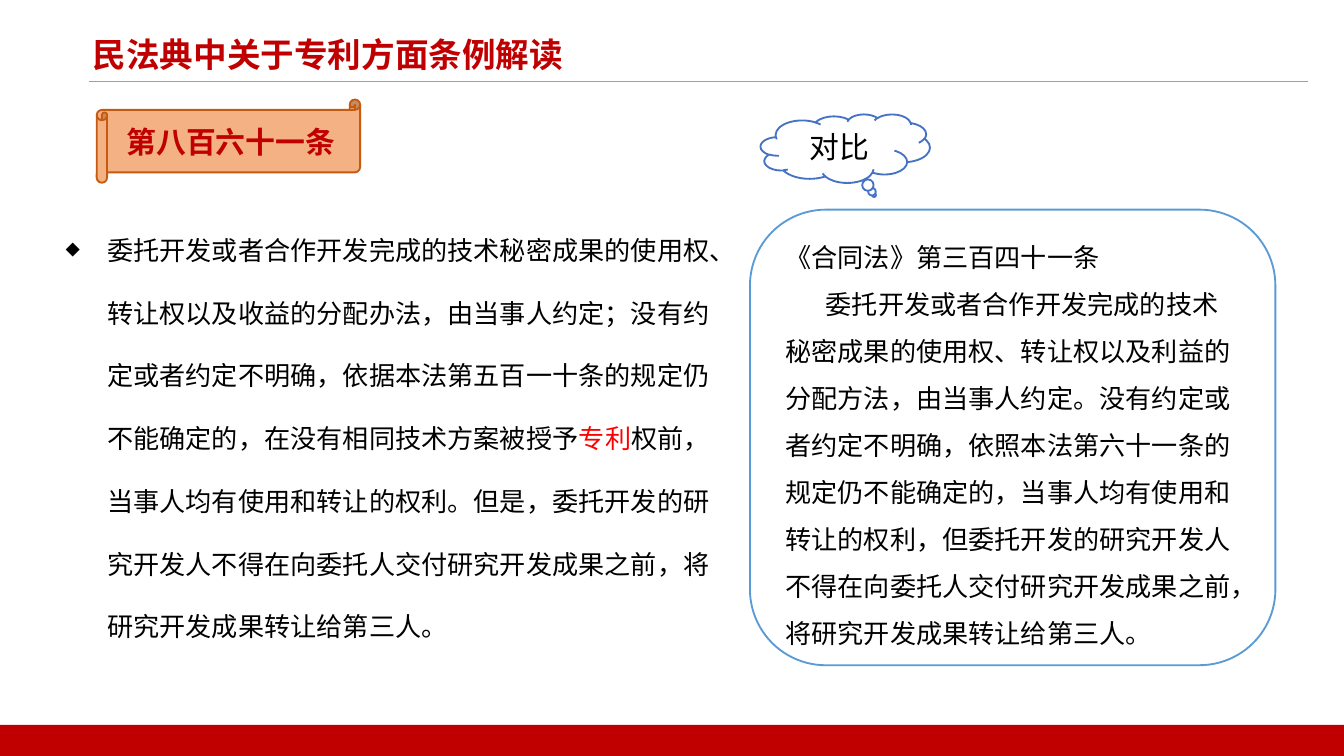
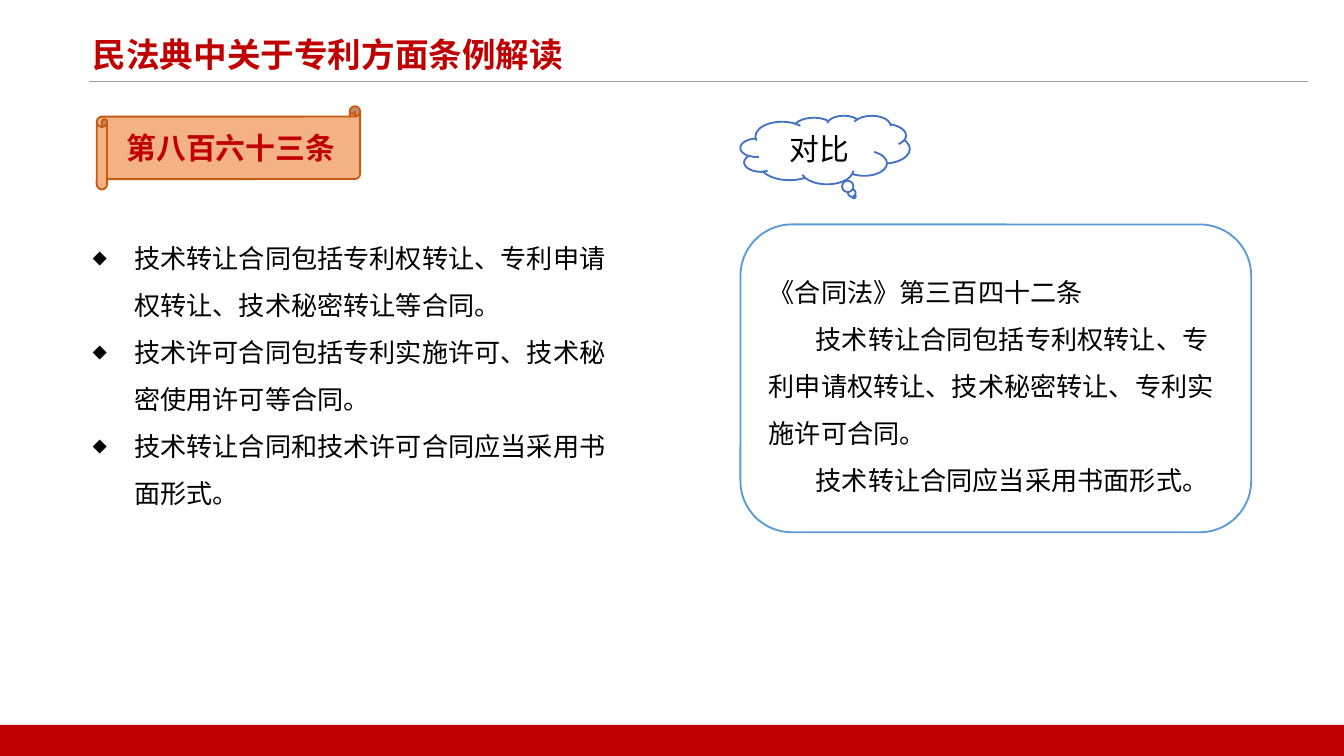
from dataclasses import dataclass

from lxml.etree import SubElement
from pptx import Presentation
from pptx.dml.color import RGBColor
from pptx.enum.shapes import MSO_CONNECTOR, MSO_SHAPE as SHAPE
from pptx.enum.text import MSO_ANCHOR as ANCHOR, MSO_AUTO_SIZE as AUTO, PP_ALIGN as ALIGN
from pptx.oxml.ns import qn
from pptx.util import Inches, Pt


@dataclass(frozen=True)
class Theme:
    """Colours, font and type sizes shared by the slides."""
    font: str = "Noto Sans CJK SC"
    red: str = "C00000"
    highlight: str = "FF0000"
    ink: str = "000000"
    paper: str = "FFFFFF"
    rule: str = "A0A0A0"
    scroll: str = "F4B183"
    scroll_edge: str = "C55A11"
    cloud_edge: str = "4472C4"
    panel_edge: str = "5B9BD5"
    title_size: int = 18
    label_size: int = 16
    body_size: int = 14


THEME = Theme()
WIDTH = 10
HEIGHT = WIDTH * 9 / 16
TITLE = "民法典中关于专利方面条例解读"


def rgb(code):
    """Turn a hex code into a colour."""
    return RGBColor.from_string(code)


def inches(box):
    """Turn a box of numbers into lengths."""
    return [Inches(value) for value in box]


def style(paragraph, size, color=THEME.ink, bold=False, spacing=1.0, align=ALIGN.LEFT):
    """Format a whole paragraph, for Latin and East Asian text alike."""
    paragraph.alignment = align
    paragraph.line_spacing = spacing
    font = paragraph.font
    font.size, font.bold, font.name = Pt(size), bold, THEME.font
    font.color.rgb = rgb(color)
    defaults = paragraph._p.pPr.find(qn("a:defRPr"))
    SubElement(defaults, qn("a:ea"), typeface=THEME.font)


def add_bullet(paragraph):
    """Give a paragraph a diamond and a hanging indent."""
    properties = paragraph._p.get_or_add_pPr()
    properties.set("marL", str(Inches(0.31)))
    properties.set("indent", str(Inches(-0.31)))
    SubElement(properties, qn("a:buSzPct"), val="55000")
    SubElement(properties, qn("a:buFont"), typeface=THEME.font)
    SubElement(properties, qn("a:buChar"), char="◆")


def add_outline(slide, kind, box, edge=None, fill=None):
    """Draw a preset shape without shadow."""
    shape = slide.shapes.add_shape(kind, *inches(box))
    shape.shadow.inherit = False
    if fill:
        shape.fill.solid()
        shape.fill.fore_color.rgb = rgb(fill)
    else:
        shape.fill.background()
    if edge:
        shape.line.color.rgb = rgb(edge)
        shape.line.width = Pt(1)
    else:
        shape.line.fill.background()
    return shape


def add_label(shape, text, color, bold):
    """Centre a short label in a shape."""
    frame = shape.text_frame
    frame.vertical_anchor = ANCHOR.MIDDLE
    frame.text = text
    style(frame.paragraphs[0], THEME.label_size, color, bold, align=ALIGN.CENTER)


def add_frame(slide):
    """Place the title, its rule and the bottom band."""
    title = slide.shapes.title
    title.left, title.top, title.width, title.height = inches((0.59, 0.2, 9.09, 0.35))
    frame = title.text_frame
    frame.text = TITLE
    frame.vertical_anchor = ANCHOR.TOP
    frame.margin_top = Inches(0.05)
    frame.auto_size = AUTO.NONE
    style(frame.paragraphs[0], THEME.title_size, THEME.red, True)

    rule = slide.shapes.add_connector(MSO_CONNECTOR.STRAIGHT, *inches((0.66, 0.61, 9.73, 0.61)))
    rule.line.color.rgb = rgb(THEME.rule)
    rule.line.width = Pt(0.5)
    SubElement(rule._element.spPr, qn("a:effectLst"))

    band_height = 0.23
    add_outline(slide, SHAPE.RECTANGLE, (0, HEIGHT - band_height, WIDTH, band_height), fill=THEME.red)


def add_article_scroll(slide, left, top, article):
    """Name the article on a scroll."""
    scroll = add_outline(slide, SHAPE.HORIZONTAL_SCROLL, (left, top, 1.96, 0.62),
                         THEME.scroll_edge, THEME.scroll)
    add_label(scroll, article, THEME.red, True)


def add_contrast_cloud(slide, left, top):
    """Place the cloud that points at the older law."""
    cloud = add_outline(slide, SHAPE.CLOUD_CALLOUT, (left, top, 1.26, 0.51),
                        THEME.cloud_edge, THEME.paper)
    cloud.adjustments[0], cloud.adjustments[1] = 0.17, 0.68
    add_label(cloud, "对比", THEME.ink, False)


def add_clauses(slide, box, clauses, spacing):
    """List clauses, each a sequence of text and colour pairs."""
    frame = slide.shapes.add_textbox(*inches(box)).text_frame
    frame.word_wrap = True
    frame.auto_size = AUTO.SHAPE_TO_FIT_TEXT
    for index, clause in enumerate(clauses):
        paragraph = frame.add_paragraph() if index else frame.paragraphs[0]
        add_bullet(paragraph)
        style(paragraph, THEME.body_size, spacing=spacing)
        for text, color in clause:
            run = paragraph.add_run()
            run.text = text
            if color != THEME.ink:
                run.font.color.rgb = rgb(color)


def add_old_law(slide, box, heading, clauses, indent):
    """Quote the older law in a rounded panel."""
    panel = add_outline(slide, SHAPE.ROUNDED_RECTANGLE, box, THEME.panel_edge)
    frame = panel.text_frame
    frame.vertical_anchor = ANCHOR.MIDDLE
    frame.text = "\n".join([heading, *clauses])
    for index, paragraph in enumerate(frame.paragraphs):
        if index:
            paragraph._p.get_or_add_pPr().set("indent", str(Inches(indent)))
        style(paragraph, THEME.body_size, spacing=1.5)


def add_article_slide(deck):
    """Start a slide with the shared frame."""
    slide = deck.slides.add_slide(deck.slide_layouts[5])
    add_frame(slide)
    return slide


def build_secret_results(deck):
    """Compare article 861 with the older law."""
    slide = add_article_slide(deck)
    add_article_scroll(slide, 0.72, 0.74, "第八百六十一条")
    add_clauses(slide, (0.39, 1.46, 5, 3.31), [[
        ("委托开发或者合作开发完成的技术秘密成果的使用权、转让权以及收益的分配办法，"
         "由当事人约定；没有约定或者约定不明确，依据本法第五百一十条的规定仍不能确定的，"
         "在没有相同技术方案被授予", THEME.ink),
        ("专利", THEME.highlight),
        ("权前，当事人均有使用和转让的权利。但是，委托开发的研究开发人不得在向委托人"
         "交付研究开发成果之前，将研究开发成果转让给第三人。", THEME.ink),
    ]], 2.0)
    add_old_law(slide, (5.58, 1.56, 3.91, 3.39), "《合同法》第三百四十一条", [
        "委托开发或者合作开发完成的技术秘密成果的使用权、转让权以及利益的分配方法，"
        "由当事人约定。没有约定或者约定不明确，依照本法第六十一条的规定仍不能确定的，"
        "当事人均有使用和转让的权利，但委托开发的研究开发人不得在向委托人交付研究开发"
        "成果之前，将研究开发成果转让给第三人。",
    ], 0.3)
    add_contrast_cloud(slide, 5.66, 0.85)


def build_transfer_contracts(deck):
    """Compare article 863 with the older law."""
    slide = add_article_slide(deck)
    add_article_scroll(slide, 0.72, 0.79, "第八百六十三条")
    add_clauses(slide, (0.59, 1.64, 4.05, 2.17), [[(clause, THEME.ink)] for clause in (
        "技术转让合同包括专利权转让、专利申请权转让、技术秘密转让等合同。",
        "技术许可合同包括专利实施许可、技术秘密使用许可等合同。",
        "技术转让合同和技术许可合同应当采用书面形式。",
    )], 1.5)
    add_contrast_cloud(slide, 5.51, 0.86)
    add_old_law(slide, (5.51, 1.67, 3.8, 2.29), "《合同法》第三百四十二条", [
        "技术转让合同包括专利权转让、专利申请权转让、技术秘密转让、专利实施许可合同。",
        "技术转让合同应当采用书面形式。",
    ], 0.35)


def main():
    """Build and save the deck."""
    deck = Presentation()
    deck.slide_width, deck.slide_height = inches((WIDTH, HEIGHT))
    build_secret_results(deck)
    build_transfer_contracts(deck)
    deck.save("out.pptx")


if __name__ == "__main__":
    main()
